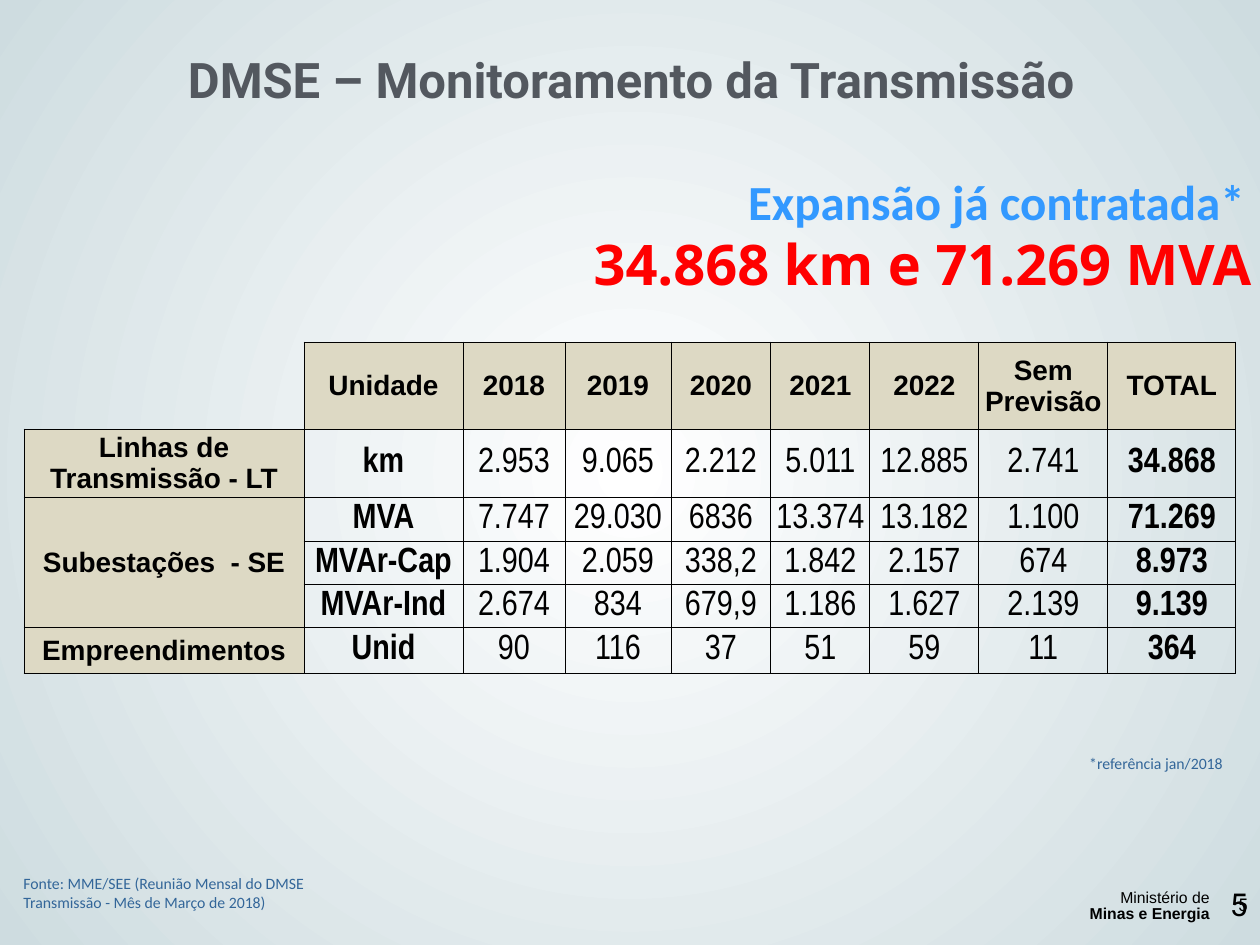
import lxml.etree
import pptx
import pptx.dml.color
import pptx.enum.text
import pptx.oxml.ns
import pptx.util

RGBColor = pptx.dml.color.RGBColor
ALIGN = pptx.enum.text.PP_ALIGN
ANCHOR = pptx.enum.text.MSO_ANCHOR
qn = pptx.oxml.ns.qn

WHITE = RGBColor(0xFF, 0xFF, 0xFF)
MIST = RGBColor(0xCE, 0xDC, 0xE0)
BLACK = RGBColor(0, 0, 0)
GRAY = RGBColor(0x53, 0x58, 0x5F)
SAND = RGBColor(0xDD, 0xD9, 0xC4)
SKY = RGBColor(0x33, 0x99, 0xFF)
RED = RGBColor(0xFF, 0, 0)
STEEL = RGBColor(0x33, 0x66, 0x99)

EMU_PER_PX = 914400 / 126
COLUMN_WIDTHS = [280, 159, 102, 106, 100, 99, 109, 129, 128]
ROW_HEIGHTS = [87, 68, 44, 43, 43, 46]
EXPANSION = [
    ["", "Unidade", "2018", "2019", "2020", "2021", "2022", "Sem Previsão", "TOTAL"],
    ["Linhas de Transmissão - LT", "km", "2.953", "9.065", "2.212", "5.011", "12.885", "2.741", "34.868"],
    ["Subestações  - SE", "MVA", "7.747", "29.030", "6836", "13.374", "13.182", "1.100", "71.269"],
    ["", "MVAr-Cap", "1.904", "2.059", "338,2", "1.842", "2.157", "674", "8.973"],
    ["", "MVAr-Ind", "2.674", "834", "679,9", "1.186", "1.627", "2.139", "9.139"],
    ["Empreendimentos", "Unid", "90", "116", "37", "51", "59", "11", "364"],
]


def px(length):
    return pptx.util.Emu(round(length * EMU_PER_PX))


def set_font(paragraph, name, size, color, bold=False):
    paragraph.font.name = name
    paragraph.font.size = pptx.util.Pt(size)
    paragraph.font.color.rgb = color
    paragraph.font.bold = bold


def add_text(slide, box, text, name, size, color, bold=False, align=ALIGN.RIGHT):
    shape = slide.shapes.add_textbox(*map(px, box))
    shape.text_frame.word_wrap = True
    paragraph = shape.text_frame.paragraphs[0]
    paragraph.text = text
    paragraph.alignment = align
    set_font(paragraph, name, size, color, bold)


def set_background(slide):
    """Radial gradient, white at the centre."""
    fill = slide.background.fill
    fill.gradient()
    for stop, color, position in zip(fill.gradient_stops, (WHITE, MIST), (0, 1)):
        stop.color.rgb = color
        stop.position = position
    gradient = slide.background._cSld.find(".//" + qn("a:gradFill"))
    linear = gradient.find(qn("a:lin"))
    circle = lxml.etree.Element(qn("a:path"), path="circle")
    lxml.etree.SubElement(circle, qn("a:fillToRect"), l="50000", t="50000", r="50000", b="50000")
    gradient.replace(linear, circle)


def set_title(slide, box):
    title = slide.shapes.title
    title.left, title.top, title.width, title.height = map(px, box)
    title.text_frame.auto_size = pptx.enum.text.MSO_AUTO_SIZE.NONE
    paragraph = title.text_frame.paragraphs[0]
    paragraph.text = "DMSE – Monitoramento da Transmissão"
    paragraph.alignment = ALIGN.CENTER
    set_font(paragraph, "Roboto", 28, GRAY, True)


def add_headline(slide, left, top):
    add_text(slide, (left, top, 885, 72), "Expansão já contratada*", "Calibri", 28, SKY, True)
    add_text(slide, (left + 97, top + 58, 796, 81), "34.868 km e 71.269 MVA", "Open Sans", 32, RED, True)


def set_borders(cell, visible_sides):
    properties = cell._tc.get_or_add_tcPr()
    for side in "LRTB":
        line = lxml.etree.SubElement(properties, qn(f"a:ln{side}"), w="6350")
        if side in visible_sides:
            fill = lxml.etree.SubElement(line, qn("a:solidFill"))
            lxml.etree.SubElement(fill, qn("a:srgbClr"), val=str(BLACK))
        else:
            lxml.etree.SubElement(line, qn("a:noFill"))


def style_cell(cell, row, column):
    is_corner = row == column == 0
    is_heading = row == 0 or column == 0
    set_borders(cell, "RB" if is_corner else "LRTB")
    if is_heading and not is_corner:
        cell.fill.solid()
        cell.fill.fore_color.rgb = SAND
    else:
        cell.fill.background()
    cell.margin_left = cell.margin_right = cell.margin_top = px(1)
    cell.margin_bottom = 0
    cell.vertical_anchor = ANCHOR.MIDDLE
    paragraph = cell.text_frame.paragraphs[0]
    paragraph.alignment = ALIGN.CENTER
    if is_heading:
        set_font(paragraph, "Arial", 16, BLACK, True)
    else:
        is_bold = column in (1, len(COLUMN_WIDTHS) - 1)
        set_font(paragraph, "Arial Narrow", 20, BLACK, is_bold)


def add_expansion_table(slide, left, top):
    box = (left, top, sum(COLUMN_WIDTHS), sum(ROW_HEIGHTS))
    table = slide.shapes.add_table(len(ROW_HEIGHTS), len(COLUMN_WIDTHS), *map(px, box)).table
    table.first_row = table.horz_banding = False
    for column, width in zip(table.columns, COLUMN_WIDTHS):
        column.width = px(width)
    for row, height in zip(table.rows, ROW_HEIGHTS):
        row.height = px(height)
    for row, texts in enumerate(EXPANSION):
        for column, text in enumerate(texts):
            cell = table.cell(row, column)
            cell.text = text
            style_cell(cell, row, column)
    table.cell(2, 0).merge(table.cell(4, 0))


def add_ministry(slide, box):
    frame = slide.shapes.add_textbox(*map(px, box)).text_frame
    frame.word_wrap = False
    frame.text = "Ministério de\nMinas e Energia"
    for paragraph, bold in zip(frame.paragraphs, (False, True)):
        paragraph.alignment = ALIGN.RIGHT
        paragraph.line_spacing = pptx.util.Pt(9)
        set_font(paragraph, "Arial", 9, BLACK, bold)


def add_footer(slide, left, top):
    source = "Fonte: MME/SEE (Reunião Mensal do DMSE Transmissão - Mês de Março de 2018)"
    add_text(slide, (left, top, 370, 50), source, "Calibri", 9, STEEL, align=ALIGN.LEFT)
    add_ministry(slide, (left + 1065, top + 17, 146, 44))
    for offset, size in ((20, 10), (11, 18)):
        add_text(slide, (left + 955, top + offset, 294, 50), "5", "Roboto", size, BLACK)


def main():
    presentation = pptx.Presentation()
    presentation.slide_width = px(1260)
    presentation.slide_height = px(945)
    slide = presentation.slides.add_slide(presentation.slide_layouts[5])
    set_background(slide)
    set_title(slide, (105, 43, 1052, 72))
    add_headline(slide, 372, 165)
    add_expansion_table(slide, 24, 342)
    add_text(slide, (938, 748, 297, 32), "*referência jan/2018", "Calibri", 9, STEEL)
    add_footer(slide, 11, 868)
    presentation.save("out.pptx")


if __name__ == "__main__":
    main()
